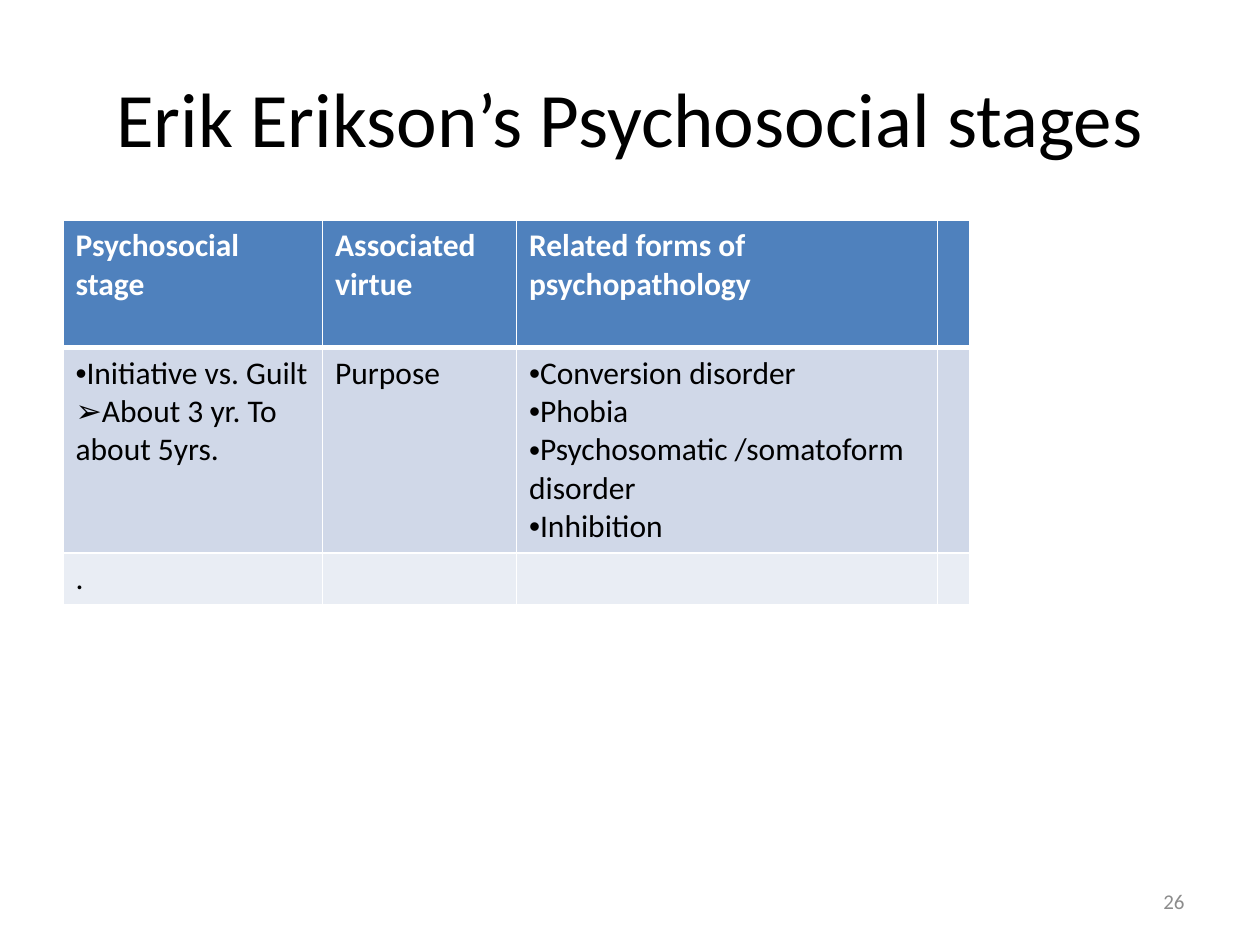
import pptx
import pptx.util
import pptx.dml.color
import pptx.enum.text
import pptx.oxml
import pptx.oxml.ns

COLORS = {
    "text": "000000",
    "white": "FFFFFF",
    "header": "4F81BD",
    "band": "D0D8E8",
    "light": "E9EDF4",
    "number": "8C8C8C",
}
ALIGN = pptx.enum.text.PP_ALIGN
NS = pptx.oxml.ns.nsdecls("a")


def rgb(name):
    return pptx.dml.color.RGBColor.from_string(COLORS[name])


def write(p, text, size=18, color="text", bold=False, align=ALIGN.LEFT, bullet=None, font="Calibri"):
    p.alignment = align
    if bullet:
        pPr = p._p.get_or_add_pPr()
        pPr.set("marL", "0")
        pPr.set("indent", "0")
        pPr.append(pptx.oxml.parse_xml(f'<a:buFont {NS} typeface="Arial"/>'))
        pPr.append(pptx.oxml.parse_xml(f'<a:buChar {NS} char="{bullet}"/>'))
    r = p.add_run()
    r.text = text
    r.font.name = font
    r.font.size = pptx.util.Pt(size)
    r.font.bold = bold
    r.font.color.rgb = rgb(color)


class Deck:
    """Hold the slide, its 100 by 75 grid and the shared style."""

    def __init__(self, width=10, height=7.5, columns=100, rows=75):
        self.prs = pptx.Presentation()
        self.prs.slide_width = pptx.util.Inches(width)
        self.prs.slide_height = pptx.util.Inches(height)
        self.col = self.prs.slide_width / columns
        self.row = self.prs.slide_height / rows
        self.s = self.prs.slides.add_slide(self.prs.slide_layouts[6])

    def place(self, x, y, w, h):
        return (round(x * self.col), round(y * self.row),
                round(w * self.col), round(h * self.row))

    def text(self, x, y, w, h, text, **style):
        tf = self.s.shapes.add_textbox(*self.place(x, y, w, h)).text_frame
        tf.word_wrap = True
        tf.vertical_anchor = pptx.enum.text.MSO_ANCHOR.MIDDLE
        write(tf.paragraphs[0], text, **style)

    def border(self, cell, **widths):
        tcPr = cell._tc.get_or_add_tcPr()
        for side in "LRTB":
            w = pptx.util.Pt(widths.get(side, 1))
            tcPr.append(pptx.oxml.parse_xml(
                f'<a:ln{side} {NS} w="{w}"><a:solidFill>'
                f'<a:srgbClr val="{COLORS["white"]}"/></a:solidFill></a:ln{side}>'))

    def table(self, x, y, widths, heights, cells, fills):
        box = self.place(x, y, sum(widths), sum(heights))
        table = self.s.shapes.add_table(len(heights), len(widths), *box).table
        for column, w in zip(table.columns, widths):
            column.width = round(w * self.col)
        for row, h in zip(table.rows, heights):
            row.height = round(h * self.row)
        for i, (row, fill) in enumerate(zip(cells, fills)):
            style = {"color": "white", "bold": True} if i == 0 else {}
            edges = [{"B": 3}, {"T": 3}, {}][min(i, 2)]
            for j, lines in enumerate(row):
                cell = table.cell(i, j)
                self.border(cell, **edges)
                cell.fill.solid()
                cell.fill.fore_color.rgb = rgb(fill)
                for n, (bullet, text) in enumerate(lines):
                    tf = cell.text_frame
                    p = tf.add_paragraph() if n else tf.paragraphs[0]
                    write(p, text, bullet=bullet, **style)


def main():
    deck = Deck()
    deck.text(5, 3, 90, 12.5, "Erik Erikson’s Psychosocial stages", size=44, align=ALIGN.CENTER)
    cells = [
        [[(None, "Psychosocial stage")], [(None, "Associated virtue")],
         [(None, "Related forms of psychopathology")], []],
        [[("•", "Initiative vs. Guilt"), ("➢", "About 3 yr. To about 5yrs.")],
         [(None, "Purpose")],
         [("•", "Conversion disorder"), ("•", "Phobia"),
          ("•", "Psychosomatic /somatoform disorder"), ("•", "Inhibition")], []],
        [[(None, ".")], [], [], []],
    ]
    deck.table(5, 17.5, [20.6, 15.4, 33.4, 2.6], [10.1, 16.3, 4.1], cells,
               ["header", "band", "light"])
    deck.text(71.7, 69.5, 23.3, 4, "26", size=12, color="number", align=ALIGN.RIGHT)
    deck.prs.save("out.pptx")


if __name__ == "__main__":
    main()
